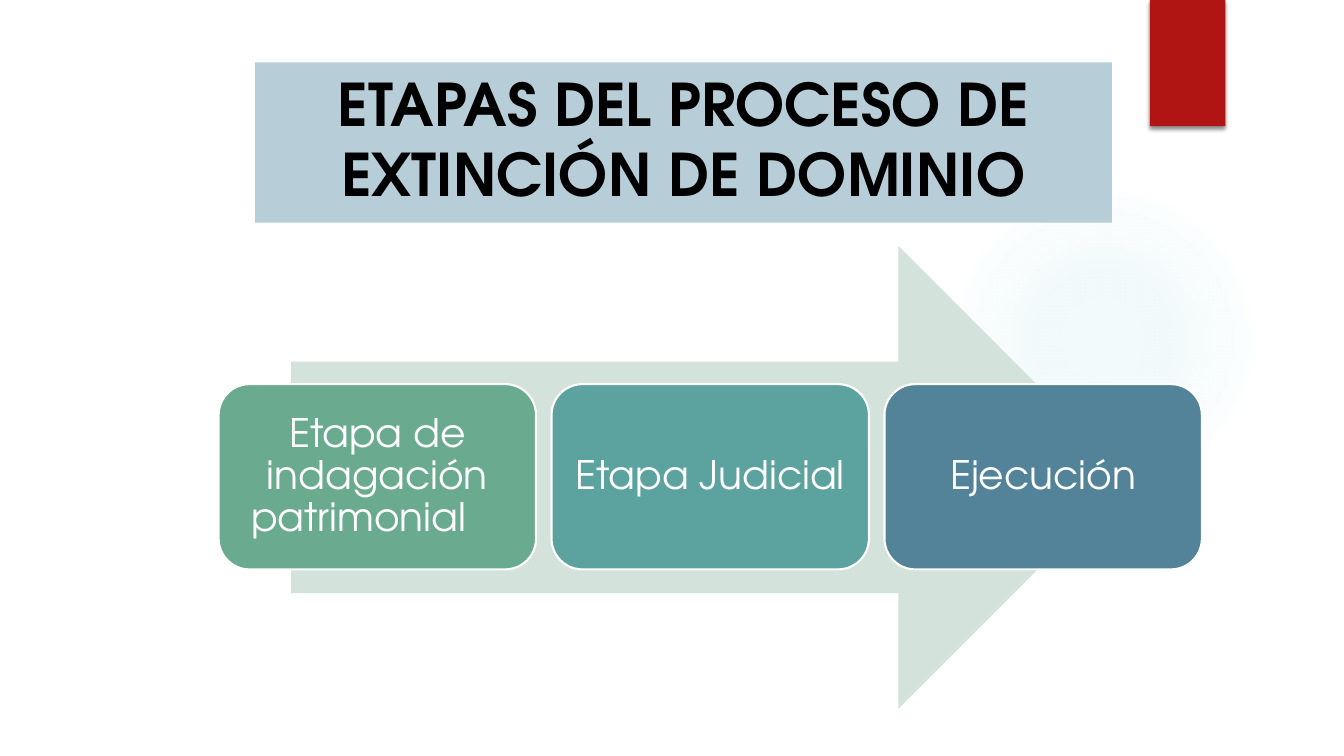
from pptx import Presentation
from pptx.dml.color import RGBColor as Rgb
from pptx.enum.shapes import MSO_SHAPE as Kind
from pptx.enum.text import MSO_ANCHOR as Anchor, MSO_AUTO_SIZE as Fit, PP_ALIGN as Align
from pptx.oxml import parse_xml
from pptx.util import Cm, Pt

HUE = {
    "red": "B01513", "glow": "4CB9C3", "arrow": "D3E2DB", "green": "6AAA8E",
    "teal": "5CA3A0", "blue": "538398", "band": "B7CDD8",
    "white": "FFFFFF", "black": "000000",
}
FONT = "TeX Gyre Adventor"
NS = 'xmlns:a="http://schemas.openxmlformats.org/drawingml/2006/main"'


def write(shape, text, size=28, color="white", bold=False, anchor=Anchor.MIDDLE,
          side=0.3, top=0.3, space=0.9):
    frame = shape.text_frame
    frame.word_wrap = True
    frame.auto_size = Fit.NONE
    frame.vertical_anchor = anchor
    frame.margin_left = frame.margin_right = Cm(side)
    frame.margin_top = frame.margin_bottom = Cm(top)
    par = frame.paragraphs[0]
    par.alignment = Align.CENTER
    par.line_spacing = space
    run = par.add_run()
    run.text = text
    run.font.name = FONT
    run.font.size = Pt(size)
    run.font.bold = bold
    run.font.color.rgb = Rgb.from_string(HUE[color])


def draw(kind, left, top, width, height, color):
    shape = slide.shapes.add_shape(kind, Cm(left), Cm(top), Cm(width), Cm(height))
    shape.shadow.inherit = False
    shape.fill.solid()
    shape.fill.fore_color.rgb = Rgb.from_string(HUE[color])
    shape.line.fill.background()
    return shape


deck = Presentation()
deck.slide_width, deck.slide_height = Cm(33.87), Cm(19.05)
slide = deck.slides.add_slide(deck.slide_layouts[5])

glow = draw(Kind.OVAL, 23.9, 4.65, 7.82, 7.82, "glow")
stops = "".join(
    f'<a:gs pos="{pos}000"><a:srgbClr val="{HUE["glow"]}"><a:alpha val="{alpha}000"/></a:srgbClr></a:gs>'
    for pos, alpha in [(0, 7), (36, 6), (69, 0), (100, 0)]
)
fade = parse_xml(
    f'<a:gradFill {NS} rotWithShape="1"><a:gsLst>{stops}</a:gsLst><a:path path="circle">'
    '<a:fillToRect l="50000" t="50000" r="50000" b="50000"/></a:path></a:gradFill>'
)
props = glow.element.spPr
props.replace(props.solidFill, fade)

flag = draw(Kind.RECTANGLE, 28.98, 0, 1.9, 3.18, "red")
shade = parse_xml(
    f'<a:outerShdw {NS} blurRad="{Pt(3)}" dist="{Pt(2)}" dir="5400000" algn="ctr" rotWithShape="0">'
    f'<a:srgbClr val="{HUE["black"]}"><a:alpha val="45000"/></a:srgbClr></a:outerShdw>'
)
flag.element.spPr.effectLst.append(shade)

draw(Kind.RIGHT_ARROW, 7.34, 6.2, 21.13, 11.66, "arrow")

steps = [
    ("Etapa de indagación patrimonial\t", "green"),
    ("Etapa Judicial", "teal"),
    ("Ejecución", "blue"),
]
for i, (text, color) in enumerate(steps):
    box = draw(Kind.ROUNDED_RECTANGLE, 5.51 + 8.39 * i, 9.68, 8, 4.67, color)
    box.line.color.rgb = Rgb.from_string(HUE["white"])
    box.line.width = Pt(1.5)
    write(box, text)

title = slide.shapes.title
title.left, title.top, title.width, title.height = Cm(6.43), Cm(1.57), Cm(21.59), Cm(4.04)
title.fill.solid()
title.fill.fore_color.rgb = Rgb.from_string(HUE["band"])
write(title, "ETAPAS DEL PROCESO DE EXTINCIÓN DE DOMINIO", size=42, color="black",
      bold=True, anchor=Anchor.TOP, side=0.25, top=0.13, space=1.0)
title.element.getparent().append(title.element)

deck.save("out.pptx")
